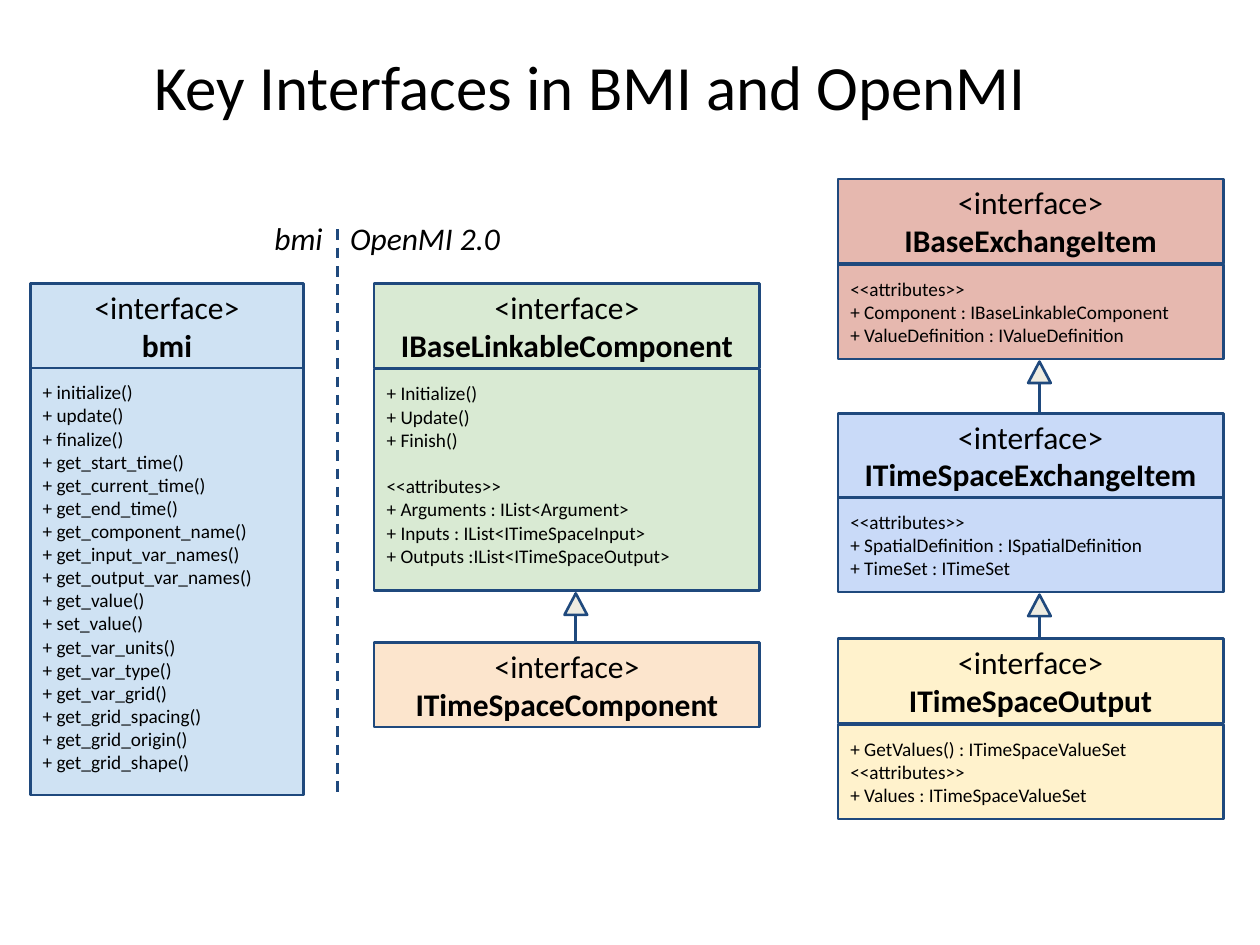
from dataclasses import dataclass

from lxml import etree
from pptx import Presentation
from pptx.dml.color import RGBColor
from pptx.enum import dml, shapes, text
from pptx.oxml.ns import qn
from pptx.util import Inches, Pt

NAVY = RGBColor(0x1F, 0x49, 0x7D)
BLACK = RGBColor(0x00, 0x00, 0x00)
BLUE = RGBColor(0xCF, 0xE2, 0xF3)
GREEN = RGBColor(0xD9, 0xEA, 0xD3)
ORANGE = RGBColor(0xFC, 0xE5, 0xCD)
RED = RGBColor(0xE6, 0xB8, 0xAF)
PERIWINKLE = RGBColor(0xC9, 0xDA, 0xF8)
YELLOW = RGBColor(0xFF, 0xF2, 0xCC)
CREAM = RGBColor(0xEE, 0xEC, 0xE1)

FONT = "Calibri"
LINE_WIDTH = Pt(1.5)
HEAD_HEIGHT = 0.67
LEFT, CENTRE, RIGHT = 0.24, 2.97, 6.65
ATTRIBUTES = "<<attributes>>"


@dataclass
class Interface:
    name: str
    left: float
    top: float
    width: float
    fill: RGBColor
    members: tuple[str, ...] = ()
    body_height: float = 0
    gap: float = 0.01  # between name box and member box

    @property
    def bottom(self) -> float:
        body = self.gap + self.body_height if self.members else 0
        return self.top + HEAD_HEIGHT + body


@dataclass
class Inheritance:
    parent: Interface
    child: Interface
    x: float


@dataclass
class Label:
    words: str
    left: float
    width: float


BMI = Interface("bmi", LEFT, 2.25, 2.17, BLUE, (
    "+ initialize()", "+ update()", "+ finalize()", "+ get_start_time()",
    "+ get_current_time()", "+ get_end_time()", "+ get_component_name()",
    "+ get_input_var_names()", "+ get_output_var_names()", "+ get_value()",
    "+ set_value()", "+ get_var_units()", "+ get_var_type()",
    "+ get_var_grid()", "+ get_grid_spacing()", "+ get_grid_origin()",
    "+ get_grid_shape()"), 3.39, gap=0)
LINKABLE = Interface("IBaseLinkableComponent", CENTRE, 2.25, 3.06, GREEN, (
    "+ Initialize()", "+ Update()", "+ Finish()", ATTRIBUTES,
    "+ Arguments : IList<Argument>", "+ Inputs : IList<ITimeSpaceInput>",
    "+ Outputs :IList<ITimeSpaceOutput>"), 1.76)
COMPONENT = Interface("ITimeSpaceComponent", CENTRE, 5.1, 3.06, ORANGE)
BASE_ITEM = Interface("IBaseExchangeItem", RIGHT, 1.42, 3.06, RED, (
    ATTRIBUTES, "+ Component : IBaseLinkableComponent",
    "+ ValueDefinition : IValueDefinition"), 0.75)
SPACE_ITEM = Interface("ITimeSpaceExchangeItem", RIGHT, 3.28, 3.06, PERIWINKLE, (
    ATTRIBUTES, "+ SpatialDefinition : ISpatialDefinition",
    "+ TimeSet : ITimeSet"), 0.75, gap=0)
OUTPUT = Interface("ITimeSpaceOutput", RIGHT, 5.07, 3.06, YELLOW, (
    "+ GetValues() : ITimeSpaceValueSet", ATTRIBUTES,
    "+ Values : ITimeSpaceValueSet"), 0.75)

INTERFACES = (BMI, LINKABLE, COMPONENT, BASE_ITEM, SPACE_ITEM, OUTPUT)
INHERITANCES = (
    Inheritance(LINKABLE, COMPONENT, 4.57),
    Inheritance(BASE_ITEM, SPACE_ITEM, 8.25),
    Inheritance(SPACE_ITEM, OUTPUT, 8.25),
)
LABELS = (Label("bmi", 2.08, 0.6), Label("OpenMI 2.0", 2.68, 1.66))


def set_frame(tf, anchor=text.MSO_ANCHOR.TOP) -> None:
    tf.word_wrap = True
    tf.auto_size = text.MSO_AUTO_SIZE.NONE
    tf.vertical_anchor = anchor
    tf.margin_left = tf.margin_right = Inches(0.1)
    tf.margin_top = tf.margin_bottom = Inches(0.1)


def write(tf, words: str, *, size: float, bold=False, italic=False,
          align=text.PP_ALIGN.LEFT, space_before: float = 0) -> None:
    """Fill the first paragraph if it is empty, otherwise add one."""
    p = tf.paragraphs[0] if not tf.text else tf.add_paragraph()
    p.alignment = align
    p.space_before = Pt(space_before)
    r = p.add_run()
    r.text = words
    r.font.name, r.font.size = FONT, Pt(size)
    r.font.bold, r.font.italic = bold, italic
    r.font.color.rgb = BLACK


def add_shape(slide, kind, left, top, width, height, fill: RGBColor):
    sp = slide.shapes.add_shape(
        kind, Inches(left), Inches(top), Inches(width), Inches(height))
    sp.shadow.inherit = False
    sp.fill.solid()
    sp.fill.fore_color.rgb = fill
    sp.line.color.rgb = NAVY
    sp.line.width = LINE_WIDTH
    return sp


def add_line(slide, x: float, top: float, bottom: float, dash=None) -> None:
    line = slide.shapes.add_connector(
        shapes.MSO_CONNECTOR.STRAIGHT,
        Inches(x), Inches(top), Inches(x), Inches(bottom))
    line.line.color.rgb = NAVY
    line.line.width = LINE_WIDTH
    if dash:
        line.line.dash_style = dash
    etree.SubElement(line._element.spPr, qn("a:effectLst"))


def draw_interface(slide, item: Interface) -> None:
    box = shapes.MSO_SHAPE.RECTANGLE
    head = add_shape(slide, box, item.left, item.top, item.width,
                     HEAD_HEIGHT, item.fill)
    set_frame(head.text_frame, text.MSO_ANCHOR.MIDDLE)
    for words, bold in (("<interface>", False), (item.name, True)):
        write(head.text_frame, words, size=18, bold=bold,
              align=text.PP_ALIGN.CENTER)
    if not item.members:
        return
    body = add_shape(slide, box, item.left, item.top + HEAD_HEIGHT + item.gap,
                     item.width, item.body_height, item.fill)
    set_frame(body.text_frame)
    for words in item.members:
        # The long member list sets its attributes one line apart
        spaced = item is LINKABLE and words == ATTRIBUTES
        write(body.text_frame, words, size=11,
              space_before=13.4 if spaced else 0)


def draw_inheritance(slide, link: Inheritance) -> None:
    width, height = 0.18, 0.17
    top = link.parent.bottom + 0.02
    add_line(slide, link.x, top, link.child.top)
    add_shape(slide, shapes.MSO_SHAPE.FLOWCHART_EXTRACT,
              link.x - width / 2, top, width, height, CREAM)


def draw_label(slide, label: Label) -> None:
    tb = slide.shapes.add_textbox(
        Inches(label.left), Inches(1.64), Inches(label.width), Inches(0.36))
    set_frame(tb.text_frame)
    write(tb.text_frame, label.words, size=18, italic=True)


def main() -> None:
    prs = Presentation()
    prs.slide_width, prs.slide_height = Inches(10), Inches(7.5)
    slide = prs.slides.add_slide(prs.slide_layouts[5])

    # Title
    title = slide.shapes.title
    title.left, title.top = Inches(0.2), Inches(0.08)
    title.width, title.height = Inches(8.97), Inches(1)
    set_frame(title.text_frame, text.MSO_ANCHOR.BOTTOM)
    write(title.text_frame, "Key Interfaces in BMI and OpenMI", size=36,
          align=text.PP_ALIGN.CENTER)

    # Class diagram
    for item in INTERFACES:
        draw_interface(slide, item)
    for link in INHERITANCES:
        draw_inheritance(slide, link)

    # Divider between the two standards
    add_line(slide, 2.68, 1.82, 6.31, dml.MSO_LINE.DASH)
    for label in LABELS:
        draw_label(slide, label)

    prs.save("out.pptx")


if __name__ == "__main__":
    main()
